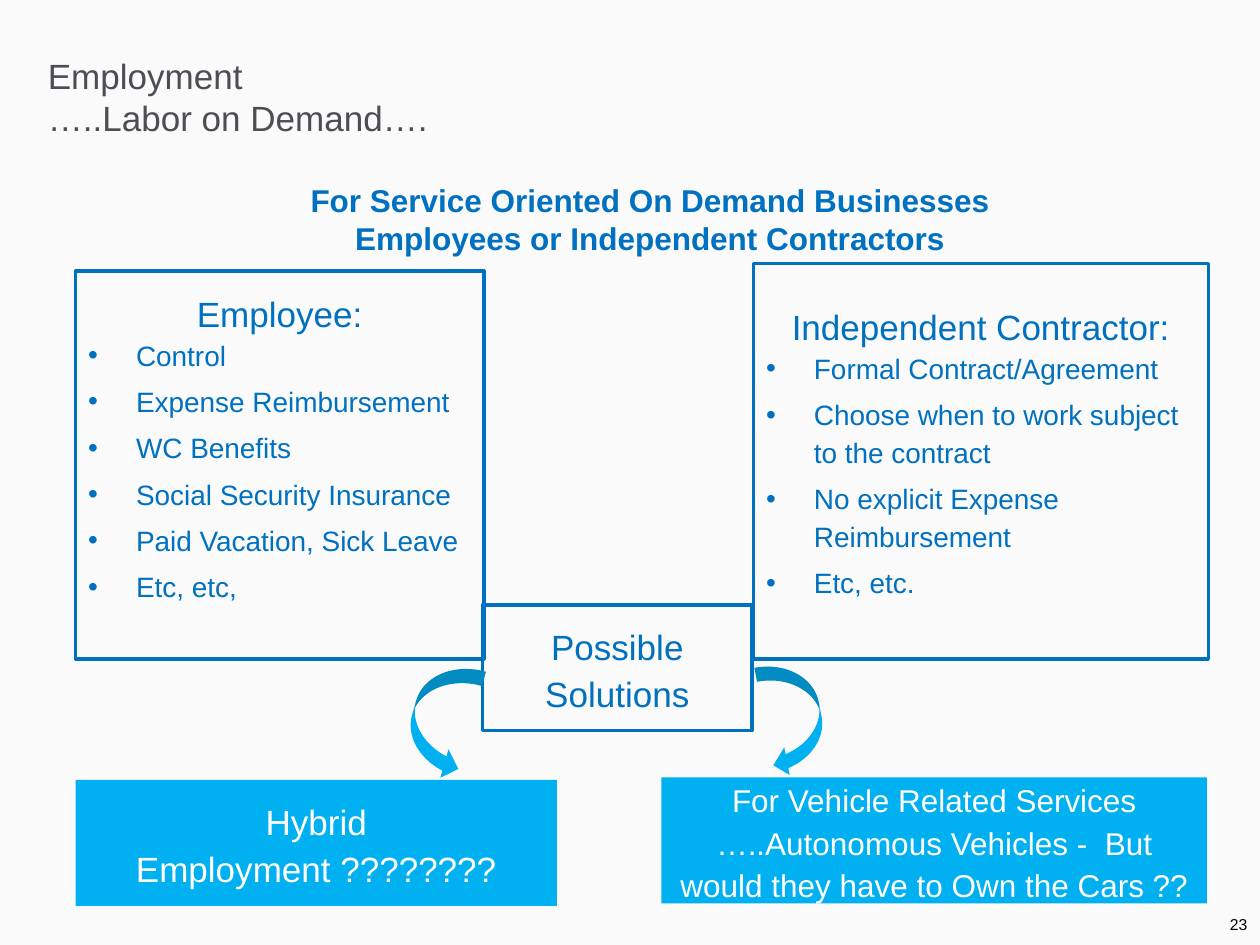
"""Build the labor-on-demand employment slide."""
from lxml.etree import SubElement
from pptx import Presentation
from pptx.dml.color import RGBColor
from pptx.enum.shapes import MSO_SHAPE as Shape
from pptx.enum.text import MSO_ANCHOR as Anchor, MSO_AUTO_SIZE as AutoSize, PP_ALIGN as Align
from pptx.oxml.ns import qn
from pptx.util import Inches, Pt

COLORS = {"background": "FAFAFA", "title": "4D4E53", "blue": "0070C0",
          "cyan": "00B0F0", "white": "FFFFFF", "black": "000000"}


def color(name):
    return RGBColor.from_string(COLORS[name])


def write(paragraph, lines, size, color_name, align=Align.LEFT, spacing=1.12, bold=False):
    paragraph.alignment = align
    paragraph.line_spacing = spacing
    paragraph.space_before = Pt(0)
    for index, line in enumerate(lines):
        if index:
            paragraph.add_line_break()
        run = paragraph.add_run()
        run.text = line
        run.font.name = "Arial"
        run.font.size = Pt(size)
        run.font.bold = bold
        run.font.color.rgb = color(color_name)


presentation = Presentation()
presentation.slide_width, presentation.slide_height = Inches(10), Inches(7.5)
slide = presentation.slides.add_slide(presentation.slide_layouts[3])
slide.background.fill.solid()
slide.background.fill.fore_color.rgb = color("background")

title = slide.shapes.title
title.left, title.top, title.width, title.height = map(Inches, (0.28, 0.38, 7.53, 0.77))
title.text_frame.auto_size = AutoSize.NONE
title.text_frame.vertical_anchor = Anchor.TOP
write(title.text_frame.paragraphs[0], ["Employment", "…..Labor on Demand…."],
      20, "title", spacing=1.0)

lists = [
    (1, (0.6, 2.15, 3.24, 3.08), 0.36, "Employee:",
     ["Control", "Expense Reimbursement", "WC Benefits", "Social Security Insurance",
      "Paid Vacation, Sick Leave", "Etc, etc,"]),
    (2, (5.98, 2.09, 3.61, 3.14), 0.23, "Independent Contractor:",
     ["Formal Contract/Agreement", "Choose when to work subject to the contract",
      "No explicit Expense Reimbursement", "Etc, etc."]),
]
for number, box, bottom, heading, items in lists:
    body = slide.placeholders[number]
    body.left, body.top, body.width, body.height = map(Inches, box)
    body.line.color.rgb = color("blue")
    body.line.width = Pt(2)
    frame = body.text_frame
    frame.auto_size = AutoSize.NONE
    frame.vertical_anchor = Anchor.MIDDLE
    frame.margin_bottom = Inches(bottom)
    paragraph = frame.paragraphs[0]
    properties = paragraph._p.get_or_add_pPr()
    properties.set("marL", "0")
    properties.set("indent", "0")
    SubElement(properties, qn("a:buNone"))
    write(paragraph, [heading], 20, "blue", Align.CENTER)
    for item in items:
        paragraph = frame.add_paragraph()
        properties = paragraph._p.get_or_add_pPr()
        properties.set("marL", str(Inches(0.38)))
        properties.set("indent", str(-Inches(0.38)))
        SubElement(properties, qn("a:buFont"), typeface="Arial")
        SubElement(properties, qn("a:buChar"), char="•")
        write(paragraph, [item], 16, "blue")
        paragraph.space_after = Pt(5)

boxes = [
    ((3.83, 4.8, 2.14, 1), None, "blue", 20, "Possible Solutions"),
    ((0.6, 6.19, 3.82, 1), "cyan", "white", 20, "Hybrid Employment ????????"),
    ((5.25, 6.17, 4.33, 1), "cyan", "white", 18,
     "For Vehicle Related Services …..Autonomous Vehicles -  But would they have to Own the Cars ??"),
]
for box, fill, text_color, size, text in boxes:
    shape = slide.shapes.add_shape(Shape.RECTANGLE, *map(Inches, box))
    shape.shadow.inherit = False
    if fill:
        shape.fill.solid()
        shape.fill.fore_color.rgb = color(fill)
        shape.line.fill.background()
    else:
        shape.fill.background()
        shape.line.color.rgb = color("blue")
        shape.line.width = Pt(2)
    shape.text_frame.word_wrap = True
    shape.text_frame.vertical_anchor = Anchor.MIDDLE
    write(shape.text_frame.paragraphs[0], [text], size, text_color, Align.CENTER)

subtitle = slide.shapes.add_textbox(*map(Inches, (2.34, 1.39, 5.64, 0.71)))
subtitle.text_frame.word_wrap = False
write(subtitle.text_frame.paragraphs[0], ["For Service Oriented On Demand Businesses"],
      18, "blue", Align.CENTER, 1.0, True)
write(subtitle.text_frame.add_paragraph(), ["Employees or Independent Contractors"],
      18, "blue", Align.CENTER, 1.0, True)

arrows = [((3.27, 5.25, 0.47, 0.92), 15.9, False), ((6.07, 5.25, 0.45, 0.9), 349, True)]
for box, rotation, flipped in arrows:
    arrow = slide.shapes.add_shape(Shape.CURVED_RIGHT_ARROW, *map(Inches, box))
    arrow.shadow.inherit = False
    arrow.rotation = rotation
    arrow.fill.solid()
    arrow.fill.fore_color.rgb = color("cyan")
    arrow.line.fill.background()
    if flipped:
        arrow._element.spPr.find(qn("a:xfrm")).set("flipH", "1")

page = slide.shapes.add_textbox(*map(Inches, (9.41, 7.28, 0.49, 0.13)))
frame = page.text_frame
frame.word_wrap = True
frame.margin_left = frame.margin_right = frame.margin_top = frame.margin_bottom = 0
write(frame.paragraphs[0], ["23"], 9, "black", Align.RIGHT, 0.85)

presentation.save("out.pptx")
